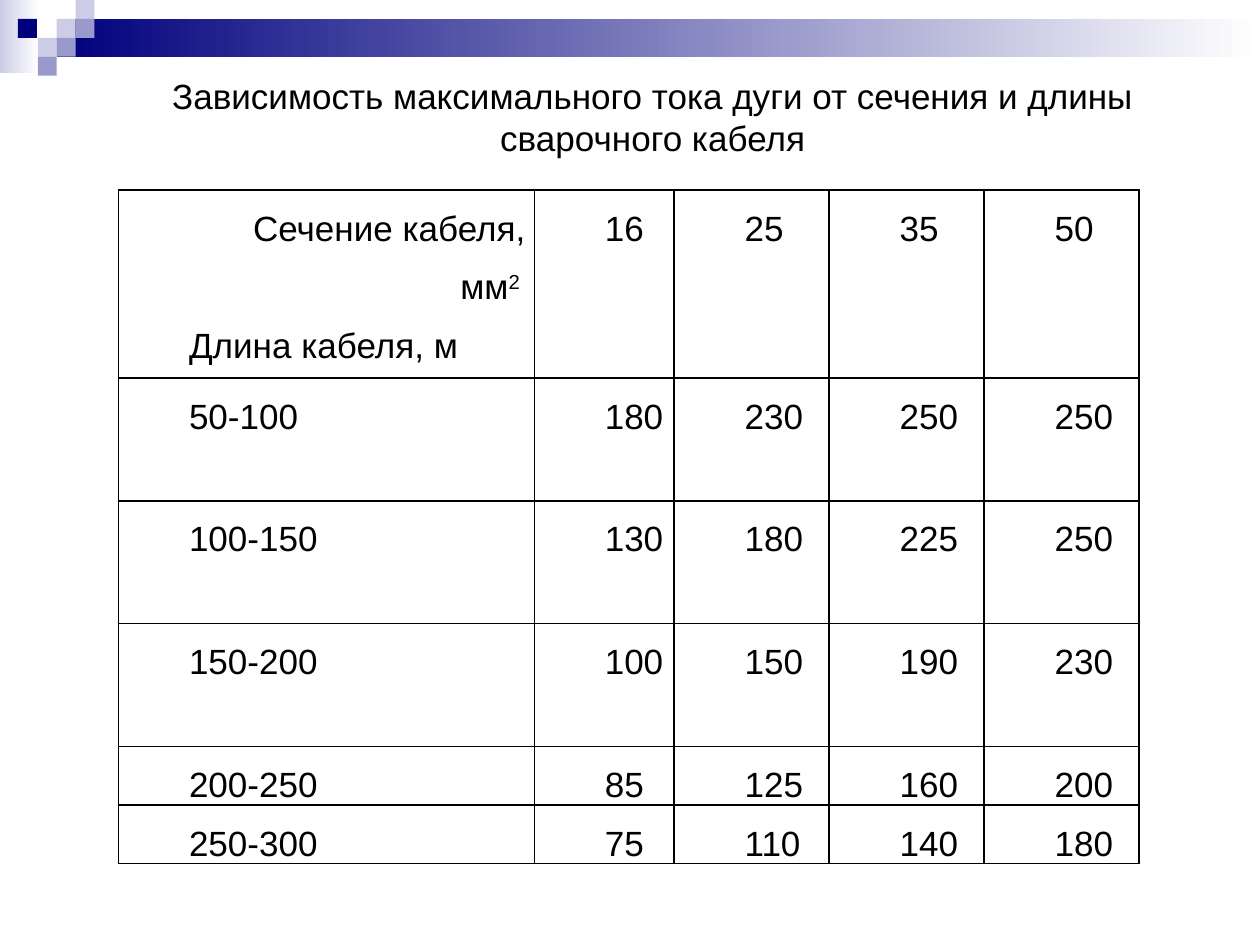
from dataclasses import dataclass

from lxml.etree import SubElement
from pptx import Presentation
from pptx.dml.color import RGBColor
from pptx.enum.shapes import MSO_SHAPE
from pptx.enum.text import MSO_ANCHOR, PP_ALIGN
from pptx.oxml import parse_xml
from pptx.oxml.ns import nsdecls, qn
from pptx.util import Inches, Pt


@dataclass(frozen=True)
class Theme:
    font: str = "Arial"
    text_size: int = 20
    ink: str = "000000"
    navy: str = "00007D"
    lavender: str = "9999CC"
    pale: str = "CCCCE6"
    white: str = "FFFFFF"
    border_width: float = 1
    line_spacing: float = 1.5
    first_indent: float = 0.49
    cell_margin: float = 0.07


MODULE = 0.15  # side of one decorative square, in inches


def modules(*counts):
    return [Inches(count * MODULE) for count in counts]


class SlideBuilder:
    def __init__(self, presentation, theme):
        self.theme = theme
        self.width = presentation.slide_width
        self.height = presentation.slide_height
        self.slide = presentation.slides.add_slide(presentation.slide_layouts[6])

    def share(self, left, top, width, height):
        """Turn shares of the slide's size into a box."""
        return (int(left * self.width), int(top * self.height),
                int(width * self.width), int(height * self.height))

    def block(self, column, row, columns, rows, *colors):
        """Draw a rectangle on the module grid; two colours make a gradient."""
        shape = self.slide.shapes.add_shape(
            MSO_SHAPE.RECTANGLE, *modules(column, row, columns, rows))
        shape.shadow.inherit = False
        shape.line.fill.background()
        if len(colors) == 1:
            shape.fill.solid()
            shape.fill.fore_color.rgb = RGBColor.from_string(colors[0])
        else:
            shape.fill.gradient()
            shape.fill.gradient_angle = 0
            for stop, color in zip(shape.fill.gradient_stops, colors):
                stop.color.rgb = RGBColor.from_string(color)

    def run(self, paragraph, text, superscript=False):
        run = paragraph.add_run()
        run.text = text
        run.font.name = self.theme.font
        run.font.size = Pt(self.theme.text_size)
        run.font.bold = False
        run.font.color.rgb = RGBColor.from_string(self.theme.ink)
        if superscript:
            run.font._element.set("baseline", "30000")

    def title(self, box, text):
        frame = self.slide.shapes.add_textbox(*self.share(*box)).text_frame
        frame.word_wrap = True
        frame.vertical_anchor = MSO_ANCHOR.MIDDLE
        paragraph = frame.paragraphs[0]
        paragraph.alignment = PP_ALIGN.CENTER
        self.run(paragraph, text)

    def cell_paragraph(self, paragraph, alignment, *texts):
        """Fill an indented paragraph; a second text is superscript."""
        paragraph.alignment = alignment
        paragraph.line_spacing = self.theme.line_spacing
        properties = paragraph._p.get_or_add_pPr()
        properties.set("marL", "0")
        properties.set("indent", str(Inches(self.theme.first_indent)))
        for index, text in enumerate(texts):
            self.run(paragraph, text, superscript=index > 0)

    def style_cell(self, cell):
        cell.margin_left = cell.margin_right = Inches(self.theme.cell_margin)
        cell.margin_top = cell.margin_bottom = 0
        cell.fill.background()
        properties = cell._tc.get_or_add_tcPr()
        for index, side in enumerate(("lnL", "lnR", "lnT", "lnB")):
            line = parse_xml(f'<a:{side} {nsdecls("a")}/>')
            line.set("w", str(Pt(self.theme.border_width)))
            fill = SubElement(line, qn("a:solidFill"))
            SubElement(fill, qn("a:srgbClr")).set("val", self.theme.ink)
            properties.insert(index, line)

    def table(self, box, column_shares, row_shares, rows):
        left, top, width, height = self.share(*box)
        table = self.slide.shapes.add_table(
            len(rows), len(rows[0]), left, top, width, height).table
        table.first_row = table.horz_banding = False
        for column, share in zip(table.columns, column_shares):
            column.width = int(share * self.width)
        for row, share in zip(table.rows, row_shares):
            row.height = int(share * self.height)
        for row, values in zip(table.rows, rows):
            for cell, value in zip(row.cells, values):
                self.style_cell(cell)
                if value:
                    self.cell_paragraph(cell.text_frame.paragraphs[0],
                                        PP_ALIGN.JUSTIFY, value)
        return table


SECTIONS = ["16", "25", "35", "50"]
CURRENTS = {
    "50-100": ["180", "230", "250", "250"],
    "100-150": ["130", "180", "225", "250"],
    "150-200": ["100", "150", "190", "230"],
    "200-250": ["85", "125", "160", "200"],
    "250-300": ["75", "110", "140", "180"],
}


def main():
    presentation = Presentation()
    presentation.slide_width, presentation.slide_height = Inches(10), Inches(7.5)
    theme = Theme()
    builder = SlideBuilder(presentation, theme)

    builder.block(0, 0, 2.05, 3.88, theme.pale, theme.white)
    builder.block(3, 1, 63.67, 2, theme.navy, theme.white)
    squares = [
        (3, 1, theme.pale), (4, 0, theme.pale), (4, 1, theme.lavender),
        (2, 2, theme.pale), (0.95, 1, theme.navy),
        (3, 2, theme.lavender), (2, 3, theme.lavender),
    ]
    for column, row, color in squares:
        builder.block(column, row, 1, 1, color)

    rows = [["", *SECTIONS]]
    rows += [[length, *values] for length, values in CURRENTS.items()]
    table = builder.table(
        (0.094, 0.201, 0.811, 0.709),
        [0.33, 0.111] + [0.123] * 3,
        [0.199] + [0.13] * 3 + [0.06] * 2, rows)
    corner = table.cell(0, 0).text_frame
    builder.cell_paragraph(corner.paragraphs[0], PP_ALIGN.RIGHT,
                           "Сечение кабеля, мм", "2 ")
    builder.cell_paragraph(corner.add_paragraph(), PP_ALIGN.JUSTIFY,
                           "Длина кабеля, м")

    builder.title((0.079, 0.072, 0.878, 0.103),
                  "Зависимость максимального тока дуги от сечения и длины "
                  "сварочного кабеля")
    presentation.save("out.pptx")


if __name__ == "__main__":
    main()
